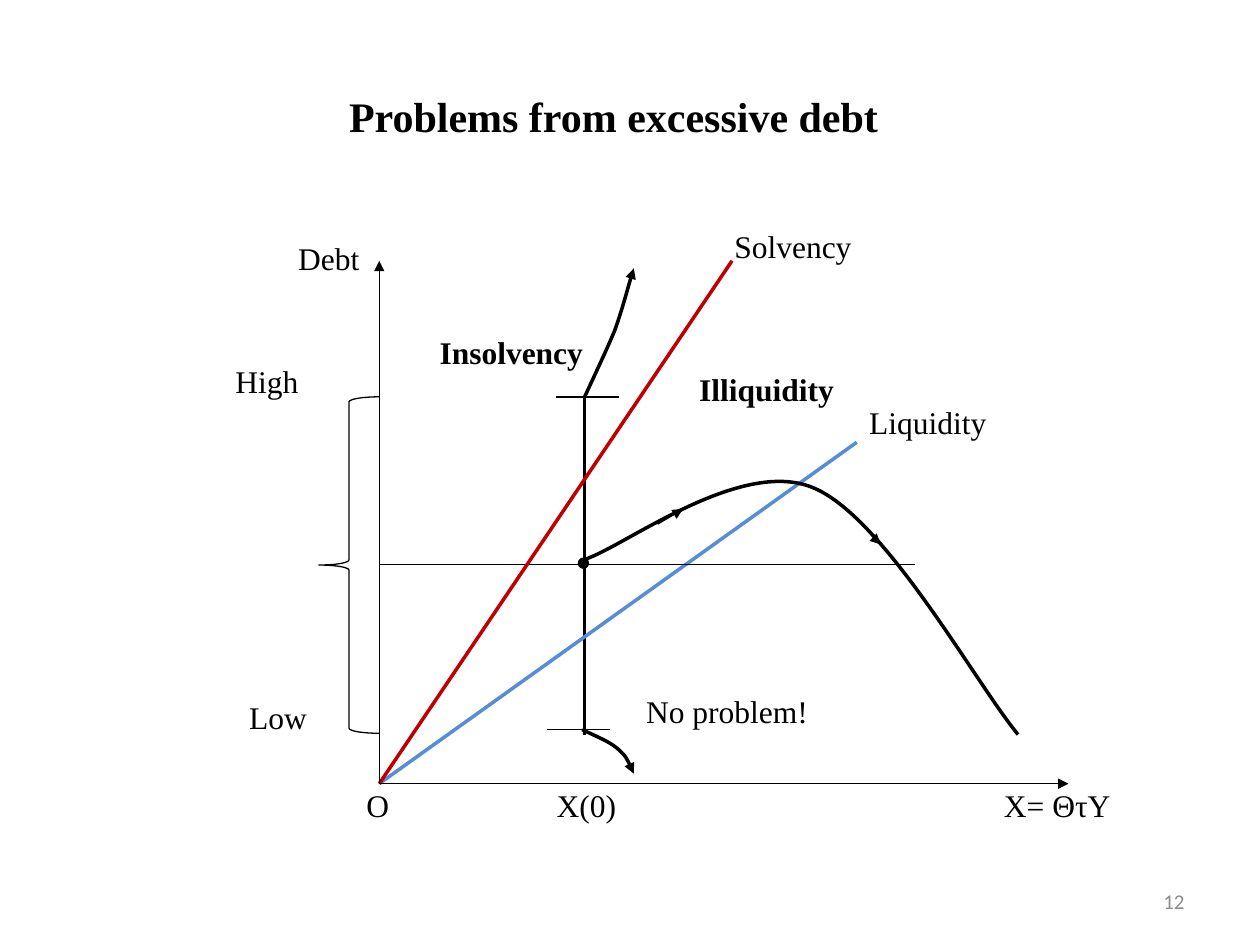
from lxml import etree
from pptx import Presentation
from pptx.dml.color import RGBColor
from pptx.enum.shapes import MSO_CONNECTOR, MSO_SHAPE
from pptx.enum.text import MSO_ANCHOR, PP_ALIGN
from pptx.oxml.ns import qn
from pptx.util import Inches, Pt

STRAIGHT = MSO_CONNECTOR.STRAIGHT
BRACE, OVAL = MSO_SHAPE.LEFT_BRACE, MSO_SHAPE.OVAL
LEFT, CENTER, RIGHT = PP_ALIGN.LEFT, PP_ALIGN.CENTER, PP_ALIGN.RIGHT
TOP, MIDDLE = MSO_ANCHOR.TOP, MSO_ANCHOR.MIDDLE
BLACK, RED, BLUE, GREY = "000000", "C00000", "558ED5", "8C8C8C"
SERIF, SANS = "Times New Roman", "Calibri"

# Diagram places are (right of, above) the origin of the axes, in inches.
LABELS = [
    ("X(0)", 1.31, 0.03, 1.04, 0.35, {}),
    ("No problem!", 2.02, 0.78, 1.96, 0.69, {}),
    ("Debt", -1.07, 4.37, 1.01, 0.52, {"align": RIGHT}),
    ("X= ΘτY", 4.86, 0.03, 1.3, 0.56, {}),
    ("Illiquidity", 2.44, 3.33, 1.82, 0.69, {"bold": True}),
    ("Insolvency", 0.38, 3.63, 1.62, 0.69, {"bold": True}),
    ("O", -0.2, 0.03, 0.64, 0.35, {}),
    ("Solvency", 2.72, 4.47, 1.95, 0.62, {}),
    ("Liquidity", 3.79, 3.07, 1.45, 0.48, {}),
    ("High", -1.24, 3.4, 0.97, 0.69, {}),
    ("Low", -1.13, 0.73, 0.97, 0.69, {}),
]
LINES = [
    ((1.63, 0.39), (1.63, 3.07), BLACK, 1.5, False),
    ((3.79, 2.71), (0, 0), BLUE, 2, False),
    ((0, 1.74), (4.25, 1.74), BLACK, 0.75, False),
    ((0, 0), (2.8, 4.15), RED, 2, False),
    ((0, 0), (0, 4.15), BLACK, 0.75, True),
    ((0, 0), (5.47, 0), BLACK, 0.75, True),
    ((2.21, 2.06), (2.41, 2.18), BLACK, 0.75, True),
    ((1.4, 3.07), (1.9, 3.07), BLACK, 0.75, False),
    ((1.33, 0.43), (1.83, 0.43), BLACK, 0.75, False),
]
CURVES = [
    ([(1.61, 0.43), (1.71, 0.38), (1.82, 0.34), (1.89, 0.28),
      (1.96, 0.22), (1.99, 0.15), (2.02, 0.08)], 2, True),
    ([(1.63, 1.78), (1.93, 1.87), (2.86, 2.59), (3.44, 2.35),
      (4.01, 2.12), (4.73, 0.8), (5.07, 0.39)], 2, False),
    ([(3.84, 2.05), (3.89, 1.99), (3.94, 1.93), (3.98, 1.9)], 0.75, True),
    ([(1.63, 3.07), (1.67, 3.16), (1.8, 3.43), (1.87, 3.6),
      (1.93, 3.77), (1.99, 4), (2.02, 4.09)], 2, True),
]


def color(value):
    """Turn a hex string into a colour."""
    return RGBColor.from_string(value)


def add_text(slide, text, box, align=LEFT, anchor=TOP, size=18, font=SERIF,
             fill=BLACK, bold=False):
    """Place one line of text in a box given in inches."""
    frame = slide.shapes.add_textbox(*map(Inches, box)).text_frame
    frame.word_wrap = True
    frame.vertical_anchor = anchor
    paragraph = frame.paragraphs[0]
    paragraph.alignment = align
    run = paragraph.add_run()
    run.text = text
    for name, value in {"size": Pt(size), "name": font, "bold": bold}.items():
        setattr(run.font, name, value)
    run.font.color.rgb = color(fill)


def style_line(shape, stroke, width, arrow=False):
    """Set the stroke of a shape and an optional arrowhead at its end."""
    shape.line.color.rgb = color(stroke)
    shape.line.width = Pt(width)
    if arrow:
        line = shape.line._get_or_add_ln()
        etree.SubElement(line, qn("a:tailEnd"), type="triangle")


def add_line(slide, start, end, stroke, width, arrow):
    """Draw a straight line between two points in inches."""
    connector = slide.shapes.add_connector(STRAIGHT, *map(Inches, start + end))
    style_line(connector, stroke, width, arrow)
    etree.SubElement(connector._element.spPr, qn("a:effectLst"))


def add_curve(slide, points, width, arrow):
    """Draw a cubic curve from a start and groups of three points."""
    start, *rest = [tuple(map(Inches, point)) for point in points]
    builder = slide.shapes.build_freeform(*start)
    builder.add_line_segments(rest, close=False)
    shape = builder.convert_to_shape()
    shape.shadow.inherit = False
    shape.fill.background()
    style_line(shape, BLACK, width, arrow)
    segments = list(shape._element.iter(qn("a:lnTo")))
    for first in range(0, len(segments), 3):
        group = segments[first:first + 3]
        cubic = etree.Element(qn("a:cubicBezTo"))
        group[0].addprevious(cubic)
        for segment in group:
            cubic.append(segment[0])
            segment.getparent().remove(segment)


def add_diagram(slide, left, top, height):
    """Draw the debt diagram with its axes in the given box."""
    def place(point):
        """Move a point of the diagram onto the slide."""
        return left + point[0], top + height - point[1]

    for start, end, *style in LINES:
        add_line(slide, place(start), place(end), *style)
    for points, *style in CURVES:
        add_curve(slide, [place(point) for point in points], *style)
    for text, x, y, width, depth, options in LABELS:
        add_text(slide, text, (*place((x, y)), width, depth), **options)
    for kind, corner, size in ((BRACE, (-0.48, 3.07), (0.48, 2.67)),
                               (OVAL, (1.58, 1.79), (0.08, 0.08))):
        shape = slide.shapes.add_shape(kind, *map(Inches, place(corner) + size))
        shape.shadow.inherit = False
        style_line(shape, BLACK, 0.75)
        if kind == OVAL:
            shape.fill.solid()
            shape.fill.fore_color.rgb = color(BLACK)
        else:
            shape.fill.background()


def main():
    """Build and save the slide."""
    presentation = Presentation()
    presentation.slide_width, presentation.slide_height = Inches(10), Inches(7.5)
    slide = presentation.slides.add_slide(presentation.slide_layouts[6])
    add_text(slide, "Problems from excessive debt", (1.08, 0.67, 7.58, 0.5),
             align=CENTER, size=24, bold=True)
    add_diagram(slide, 3.01, 2.07, 4.15)
    add_text(slide, "12", (7.17, 6.95, 2.33, 0.4), align=RIGHT, anchor=MIDDLE,
             size=12, font=SANS, fill=GREY)
    presentation.save("out.pptx")


if __name__ == "__main__":
    main()
